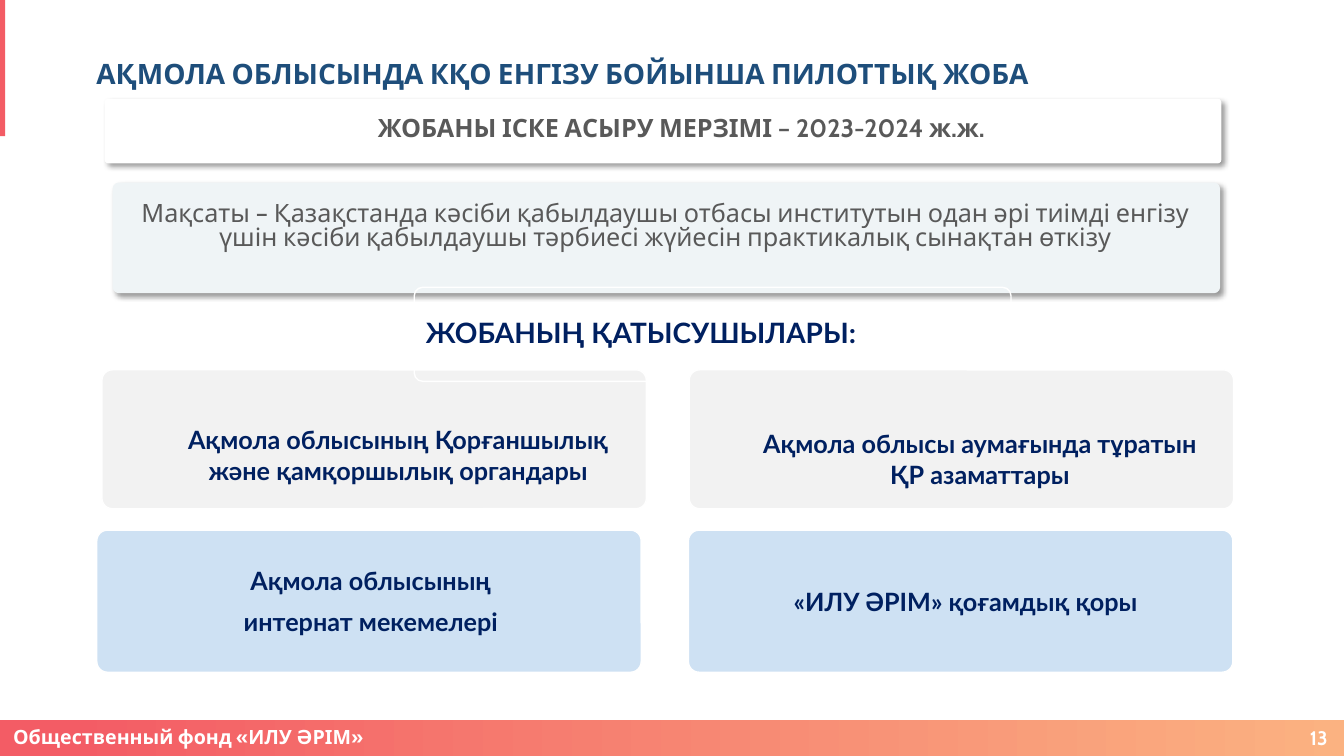
import pptx
import pptx.util
import pptx.oxml
import pptx.oxml.ns
import pptx.dml.color
import pptx.enum.shapes
import pptx.enum.text
from dataclasses import dataclass

Cm = pptx.util.Cm
Pt = pptx.util.Pt
Kind = pptx.enum.shapes.MSO_SHAPE
Align = pptx.enum.text.PP_ALIGN
Anchor = pptx.enum.text.MSO_ANCHOR


@dataclass(frozen=True)
class Theme:
    coral: str = "F35C65"
    peach: str = "FBB281"
    white: str = "FFFFFF"
    title: str = "1E4E7B"
    navy: str = "002060"
    grey_text: str = "595959"
    mist: str = "EFF4F6"
    grey_card: str = "F2F2F2"
    blue_card: str = "CEE1F3"
    sans: str = "Cabin"
    card_font: str = "Lato"
    large: int = 20
    medium: int = 18
    small: int = 14


THEME = Theme()
FOUNDATION = "«ИЛУ ӘРІМ»"


def color(value):
    return pptx.dml.color.RGBColor.from_string(value)


def place(box, area):
    box.left, box.top, box.width, box.height = (Cm(length) for length in area)


def write(box, lines, *, size, ink, font=THEME.sans, bold=True, align=Align.LEFT,
          anchor=Anchor.MIDDLE, insets=(0.25, 0.13, 0.25, 0.13), line=1.0,
          before=0, after=0):
    """Fill a box with one paragraph per line of text."""
    frame = box.text_frame
    frame.word_wrap = True
    frame.vertical_anchor = anchor
    (frame.margin_left, frame.margin_top,
     frame.margin_right, frame.margin_bottom) = (Cm(inset) for inset in insets)
    for number, text in enumerate(lines):
        para = frame.add_paragraph() if number else frame.paragraphs[0]
        para.alignment = align
        para.line_spacing = line
        para.space_before, para.space_after = Pt(before), Pt(after)
        span = para.add_run()
        span.text = text
        span.font.name = font
        span.font.size = Pt(size)
        span.font.bold = bold
        span.font.color.rgb = color(ink)


def add_text(page, area, lines, **style):
    box = page.shapes.add_textbox(*(Cm(length) for length in area))
    write(box, lines, **style)


def add_block(page, area, fill=None, outline=None, radius=None):
    """Add a rectangle, rounded when a radius share is given."""
    kind = Kind.RECTANGLE if radius is None else Kind.ROUNDED_RECTANGLE
    block = page.shapes.add_shape(kind, *(Cm(length) for length in area))
    block.shadow.inherit = False
    if radius is not None:
        block.adjustments[0] = radius
    if fill:
        block.fill.solid()
        block.fill.fore_color.rgb = color(fill)
    else:
        block.fill.background()
    if outline:
        block.line.color.rgb = color(outline)
        block.line.width = Pt(1)
    else:
        block.line.fill.background()
    return block


def add_panel(page, area, fill):
    """Add a rounded panel that casts a shadow down to the right."""
    panel = add_block(page, area, fill, radius=0.056)
    effects = panel._element.spPr.find(pptx.oxml.ns.qn("a:effectLst"))
    effects.append(pptx.oxml.parse_xml(
        f'<a:outerShdw {pptx.oxml.ns.nsdecls("a")} blurRad="50800" dist="38100" '
        'dir="2700000" algn="tl" rotWithShape="0"><a:srgbClr val="000000">'
        '<a:alpha val="40000"/></a:srgbClr></a:outerShdw>'))


def add_card(page, area, fill, text_area, lines, **style):
    add_block(page, area, fill, THEME.white, radius=0.075)
    add_text(page, text_area, lines, size=THEME.medium, ink=THEME.navy,
             font=THEME.card_font, align=Align.CENTER,
             insets=(0.2, 0.1, 0.2, 0.1), **style)


def add_frame(page):
    """Add the footer band, its texts and the corner accent."""
    band = add_block(page, (0, 18.14, 33.87, 0.91), THEME.coral)
    band.fill.gradient()
    band.fill.gradient_angle = 0
    stops = ((0.05, THEME.coral), (1, THEME.peach))
    for stop, (position, tint) in zip(band.fill.gradient_stops, stops):
        stop.position = position
        stop.color.rgb = color(tint)
    footer = dict(size=THEME.small, ink=THEME.white)
    add_text(page, (0.08, 18.34, 23.32, 0.53),
             [f"Общественный фонд {FOUNDATION}"], line=0.9, **footer)
    add_text(page, (32.31, 18.26, 1.4, 0.66), ["13"], align=Align.RIGHT, **footer)
    add_block(page, (0, 0, 0.13, 3.43), THEME.coral)


def main():
    deck = pptx.Presentation()
    deck.slide_width, deck.slide_height = Cm(33.87), Cm(19.05)
    page = deck.slides.add_slide(deck.slide_layouts[5])
    add_frame(page)

    # Title
    place(page.shapes.title, (2.18, 0.81, 26.9, 2.08))
    write(page.shapes.title, ["АҚМОЛА ОБЛЫСЫНДА КҚО ЕНГІЗУ БОЙЫНША ПИЛОТТЫҚ ЖОБА"],
          size=THEME.large, ink=THEME.title)

    # Term and purpose
    statement = dict(size=THEME.medium, ink=THEME.grey_text, align=Align.CENTER,
                     anchor=Anchor.TOP, line=0.8)
    add_panel(page, (2.64, 2.49, 28.14, 1.63), THEME.white)
    add_text(page, (3.61, 2.95, 27.13, 0.66),
             ["ЖОБАНЫ ІСКЕ АСЫРУ МЕРЗІМІ – 2023-2024 ж.ж."],
             insets=(0, 0.03, 0, 0), **statement)
    add_panel(page, (2.84, 4.6, 27.91, 2.79), THEME.mist)
    add_text(page, (2.64, 4.98, 28.27, 1.5),
             ["Мақсаты – Қазақстанда кәсіби қабылдаушы отбасы институтын одан әрі "
              "тиімді енгізу үшін кәсіби қабылдаушы тәрбиесі жүйесін практикалық "
              "сынақтан өткізу"], bold=False, **statement)

    # Participants: the heading outline lies over the left card, under the right one
    add_card(page, (2.57, 9.32, 13.72, 3.5), THEME.grey_card, (4.09, 9.6, 11.89, 3.73),
             ["Ақмола облысының Қорғаншылық және қамқоршылық органдары"], after=6)
    heading = add_block(page, (10.44, 7.24, 15.04, 2.37), outline=THEME.white,
                        radius=0.09)
    write(heading, ["ЖОБАНЫҢ ҚАТЫСУШЫЛАРЫ:"], size=THEME.large, ink=THEME.navy,
          font=THEME.card_font, line=0.9, insets=(0.23, 0.23, 2.92, 0.23))
    add_card(page, (17.37, 9.32, 13.72, 3.5), THEME.grey_card, (18.75, 9.7, 11.89, 3.73),
             ["Ақмола облысы аумағында тұратын ҚР азаматтары"], after=6)
    add_card(page, (2.44, 13.36, 13.72, 3.58), THEME.blue_card, (3.4, 13.13, 11.89, 4.04),
             ["Ақмола облысының", "интернат мекемелері"], after=8)
    add_card(page, (17.35, 13.36, 13.72, 3.58), THEME.blue_card,
             (18.39, 13.34, 11.89, 3.73), [f"{FOUNDATION} қоғамдық қоры"], line=0.9)

    deck.save("out.pptx")


if __name__ == "__main__":
    main()
